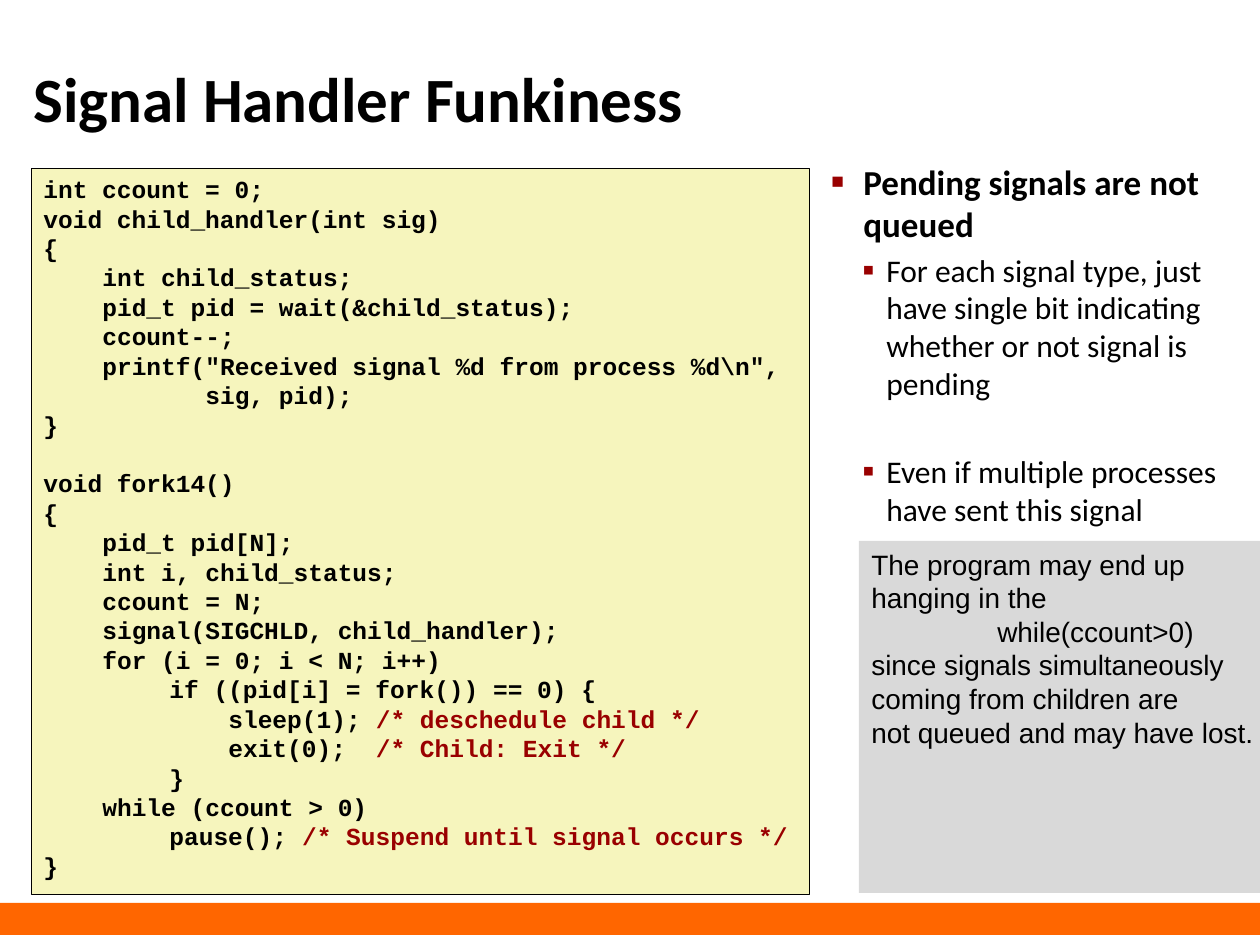
from dataclasses import dataclass

from lxml import etree
from pptx import Presentation
from pptx.dml.color import RGBColor
from pptx.enum.shapes import MSO_SHAPE
from pptx.enum.text import MSO_ANCHOR, MSO_AUTO_SIZE, PP_ALIGN
from pptx.oxml.ns import qn
from pptx.util import Emu, Pt

RECTANGLE = MSO_SHAPE.RECTANGLE
TOP, MIDDLE = MSO_ANCHOR.TOP, MSO_ANCHOR.MIDDLE
LEFT = PP_ALIGN.LEFT
NO_AUTOFIT = MSO_AUTO_SIZE.NONE
EMU_PER_PX = 914400 / 126
TITLE_ONLY = 5


@dataclass(frozen=True)
class Theme:
    """Colours, fonts and type sizes of the slide."""
    ink: str = "000000"
    accent: str = "990000"
    band: str = "FF6600"
    code_fill: str = "F6F5BD"
    note_fill: str = "D9D9D9"
    heading_font: str = "Calibri"
    code_font: str = "Courier New"
    note_font: str = "Arial"
    title_size: int = 36
    point_size: int = 20
    detail_size: int = 18
    note_size: int = 16
    code_size: int = 14
    leading: float = 1.2


THEME = Theme()
STATEMENT, ARGUMENT, BLOCK, NESTED = 59, 162, 126, 185
CODE_SECTIONS = [
    [
        (0, "int ccount = 0;", ""),
        (0, "void child_handler(int sig)", ""),
        (0, "{", ""),
        (STATEMENT, "int child_status;", ""),
        (STATEMENT, "pid_t pid = wait(&child_status);", ""),
        (STATEMENT, "ccount--;", ""),
        (STATEMENT, 'printf("Received signal %d from process %d\\n",', ""),
        (ARGUMENT, "sig, pid);", ""),
        (0, "}", ""),
    ],
    [
        (0, "void fork14()", ""),
        (0, "{", ""),
        (STATEMENT, "pid_t pid[N];", ""),
        (STATEMENT, "int i, child_status;", ""),
        (STATEMENT, "ccount = N;", ""),
        (STATEMENT, "signal(SIGCHLD, child_handler);", ""),
        (STATEMENT, "for (i = 0; i < N; i++)", ""),
        (BLOCK, "if ((pid[i] = fork()) == 0) {", ""),
        (NESTED, "sleep(1); ", "/* deschedule child */"),
        (NESTED, "exit(0);  ", "/* Child: Exit */"),
        (BLOCK, "}", ""),
        (STATEMENT, "while (ccount > 0)", ""),
        (BLOCK, "pause(); ", "/* Suspend until signal occurs */"),
        (0, "}", ""),
    ],
]
DETAILS = [
    ("For each signal type, just have single bit indicating "
     "whether or not signal is pending", 3.6),
    ("Even if multiple processes have sent this signal", 28.8),
]
NOTE_LINES = [
    (0, "The program may end up"),
    (0, "hanging in the"),
    (126, "while(ccount>0)"),
    (0, "since signals simultaneously"),
    (0, "coming from children are"),
    (0, "not queued and may have lost."),
]


def px(length):
    """Turn pixels into EMU."""
    return Emu(round(length * EMU_PER_PX))


def color(value):
    """Turn a hex value into a colour."""
    return RGBColor.from_string(value)


def add_run(paragraph, text, font, size, ink=THEME.ink, bold=False):
    """Append one formatted run."""
    run = paragraph.add_run()
    run.text = text
    run.font.name = font
    run.font.size = Pt(size)
    run.font.bold = bold
    run.font.color.rgb = color(ink)


def next_paragraph(frame, size, margin=0, hanging=0, before=0):
    """Return a fresh left-aligned paragraph with its indent and spacing."""
    paragraph = frame.paragraphs[0]
    if paragraph.runs:
        paragraph = frame.add_paragraph()
    paragraph.alignment = LEFT
    paragraph.line_spacing = Pt(size * THEME.leading)
    paragraph.space_before = Pt(before)
    properties = paragraph._p.get_or_add_pPr()
    properties.set("marL", str(px(margin)))
    properties.set("indent", str(-px(hanging)))
    return paragraph


def add_bullet(paragraph, character, percent):
    """Give a paragraph an accent-coloured bullet."""
    properties = paragraph._p.get_or_add_pPr()
    bullet_color = etree.SubElement(properties, qn("a:buClr"))
    etree.SubElement(bullet_color, qn("a:srgbClr"), val=THEME.accent)
    etree.SubElement(properties, qn("a:buSzPct"), val=str(percent * 1000))
    etree.SubElement(properties, qn("a:buFont"), typeface=THEME.note_font)
    etree.SubElement(properties, qn("a:buChar"), char=character)


def add_panel(slide, box, fill, outline=None):
    """Add a filled rectangle and return its text frame."""
    shape = slide.shapes.add_shape(RECTANGLE, *map(px, box))
    shape.shadow.inherit = False
    shape.fill.solid()
    shape.fill.fore_color.rgb = color(fill)
    if outline:
        shape.line.color.rgb = color(outline)
        shape.line.width = Pt(0.25)
    else:
        shape.line.fill.background()
    frame = shape.text_frame
    frame.word_wrap = True
    frame.vertical_anchor = TOP
    return frame


def set_title(slide, box, text):
    """Place and format the title placeholder."""
    title = slide.shapes.title
    title.left, title.top, title.width, title.height = map(px, box)
    frame = title.text_frame
    frame.auto_size = NO_AUTOFIT
    frame.vertical_anchor = MIDDLE
    paragraph = next_paragraph(frame, THEME.title_size)
    add_run(paragraph, text, THEME.heading_font, THEME.title_size, bold=True)


def add_code(slide, box):
    """Add the code listing with highlighted comments."""
    size = THEME.code_size
    frame = add_panel(slide, box, THEME.code_fill, THEME.ink)
    for section_index, section in enumerate(CODE_SECTIONS):
        for line_index, (margin, code, comment) in enumerate(section):
            gap = size * THEME.leading if section_index and not line_index else 0
            paragraph = next_paragraph(frame, size, margin, before=gap)
            add_run(paragraph, code, THEME.code_font, size, bold=True)
            if comment:
                add_run(paragraph, comment, THEME.code_font, size, THEME.accent, True)


def add_points(slide, box):
    """Add the main point and its details."""
    frame = slide.shapes.add_textbox(*map(px, box)).text_frame
    frame.word_wrap = True
    paragraph = next_paragraph(frame, THEME.point_size, 32, 32)
    add_bullet(paragraph, "■", 60)
    add_run(paragraph, "Pending signals are not queued",
            THEME.heading_font, THEME.point_size, bold=True)
    for text, before in DETAILS:
        paragraph = next_paragraph(frame, THEME.detail_size, 55, 24, before)
        paragraph.level = 1
        add_bullet(paragraph, "▪", 110)
        add_run(paragraph, text, THEME.heading_font, THEME.detail_size)


def add_note(slide, box):
    """Add the grey note about lost signals."""
    frame = add_panel(slide, box, THEME.note_fill)
    frame.margin_right = 0
    for margin, text in NOTE_LINES:
        paragraph = next_paragraph(frame, THEME.note_size, margin)
        add_run(paragraph, text, THEME.note_font, THEME.note_size)


def main():
    """Build and save the presentation."""
    presentation = Presentation()
    presentation.slide_width, presentation.slide_height = px(1260), px(945)
    slide = presentation.slides.add_slide(presentation.slide_layouts[TITLE_ONLY])
    add_panel(slide, (0, 903, 1260, 32), THEME.band)
    set_title(slide, (21, 58, 971, 79), "Signal Handler Funkiness")
    add_points(slide, (819, 154, 441, 462))
    add_code(slide, (31, 168, 778, 726))
    add_note(slide, (859, 541, 401, 352))
    presentation.save("out.pptx")


if __name__ == "__main__":
    main()
